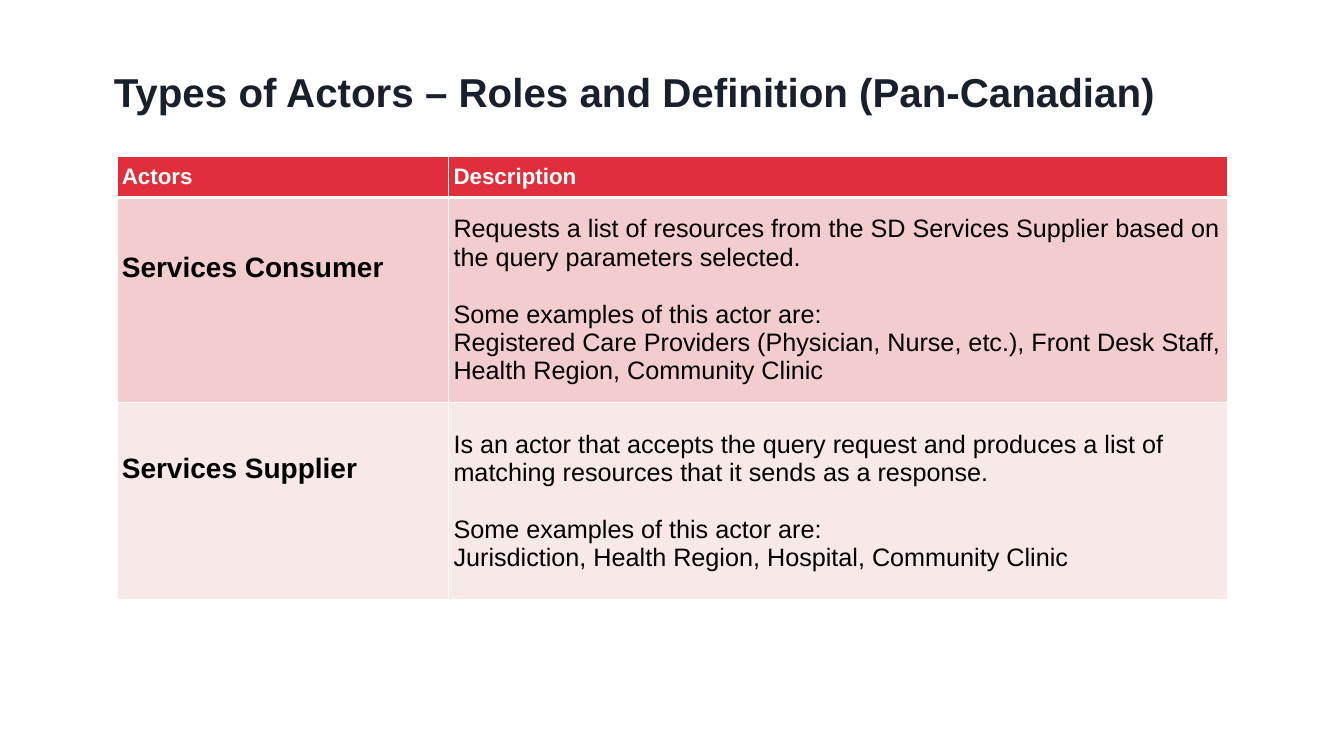
from pptx import Presentation
from pptx.dml.color import RGBColor
from pptx.enum.text import MSO_ANCHOR
from pptx.oxml import parse_xml
from pptx.oxml.ns import nsdecls
from pptx.util import Cm, Pt

NAVY = RGBColor(0x18, 0x1F, 0x2D)
RED = RGBColor(0xE0, 0x2E, 0x3B)
ROSE = RGBColor(0xF3, 0xCD, 0xCE)
BLUSH = RGBColor(0xF9, 0xE8, 0xE8)
WHITE = RGBColor(0xFF, 0xFF, 0xFF)
BLACK = RGBColor(0x00, 0x00, 0x00)

TITLE = {"size": Pt(28.8), "bold": True}
HEAD = {"size": Pt(16), "bold": True}
LABEL = {"size": Pt(20), "bold": True}
BODY = {"size": Pt(18), "bold": False}

GAP = Pt(20.7)  # one body line
LIFT = Cm(1.62)  # raises the actor names above the middle
COLS = (8.36, 19.63)
ROWS = (1.04, 5.16, 4.98)
EXAMPLES = "Some examples of this actor are:"
ACTORS = (
    ("Services Consumer", ROSE, (
        "Requests a list of resources from the SD Services Supplier "
        "based on the query parameters selected.",
        EXAMPLES,
        "Registered Care Providers (Physician, Nurse, etc.), "
        "Front Desk Staff, Health Region, Community Clinic")),
    ("Services Supplier", BLUSH, (
        "Is an actor that accepts the query request and produces "
        "a list of matching resources that it sends as a response.",
        EXAMPLES,
        "Jurisdiction, Health Region, Hospital, Community Clinic")),
)


def write(frame, lines, style, color):
    """Write one paragraph per line, with a gap above the examples."""
    frame.word_wrap = True
    for i, line in enumerate(lines):
        para = frame.paragraphs[0] if i == 0 else frame.add_paragraph()
        run = para.add_run()
        run.text = line
        run.font.name = "Arial"
        run.font.color.rgb = color
        for key, value in style.items():
            setattr(run.font, key, value)
        if line == EXAMPLES:
            para.space_before = GAP


def add_title(slide, text):
    box = slide.shapes.add_textbox(Cm(2.72), Cm(1.42), Cm(28.32), Cm(1.75))
    frame = box.text_frame
    frame.vertical_anchor = MSO_ANCHOR.MIDDLE
    for side in ("left", "top", "right", "bottom"):
        setattr(frame, f"margin_{side}", Cm(0.15))
    write(frame, [text], TITLE, NAVY)


def add_edges(cell, base):
    props = cell._tc.get_or_add_tcPr()
    for side, width in (("L", 1), ("R", 1), ("T", 1), ("B", base)):
        props.append(parse_xml(
            f'<a:ln{side} {nsdecls("a")} w="{Pt(width)}"><a:solidFill>'
            f'<a:srgbClr val="{WHITE}"/></a:solidFill></a:ln{side}>'))


def fill_cell(cell, lines, style, color, fill, base=1, lift=0):
    cell.vertical_anchor = MSO_ANCHOR.MIDDLE
    for side in ("left", "top", "right", "bottom"):
        setattr(cell, f"margin_{side}", Cm(0.12))
    cell.margin_bottom += lift
    add_edges(cell, base)
    cell.fill.solid()
    cell.fill.fore_color.rgb = fill
    write(cell.text_frame, lines, style, color)


def add_grid(slide):
    grid = slide.shapes.add_table(
        len(ROWS), len(COLS), Cm(2.95), Cm(3.94),
        Cm(sum(COLS)), Cm(sum(ROWS))).table
    for col, width in zip(grid.columns, COLS):
        col.width = Cm(width)
    for row, height in zip(grid.rows, ROWS):
        row.height = Cm(height)
    # Header row
    for i, text in enumerate(("Actors", "Description")):
        fill_cell(grid.cell(0, i), [text], HEAD, WHITE, RED, base=3)
    # One row per actor
    for i, (name, fill, lines) in enumerate(ACTORS, 1):
        fill_cell(grid.cell(i, 0), [name], LABEL, BLACK, fill, lift=LIFT)
        fill_cell(grid.cell(i, 1), lines, BODY, BLACK, fill)


def main():
    deck = Presentation()
    deck.slide_width, deck.slide_height = Cm(33.87), Cm(19.05)
    slide = deck.slides.add_slide(deck.slide_layouts[6])
    add_title(slide, "Types of Actors – Roles and Definition (Pan-Canadian)")
    add_grid(slide)
    deck.save("out.pptx")


if __name__ == "__main__":
    main()
